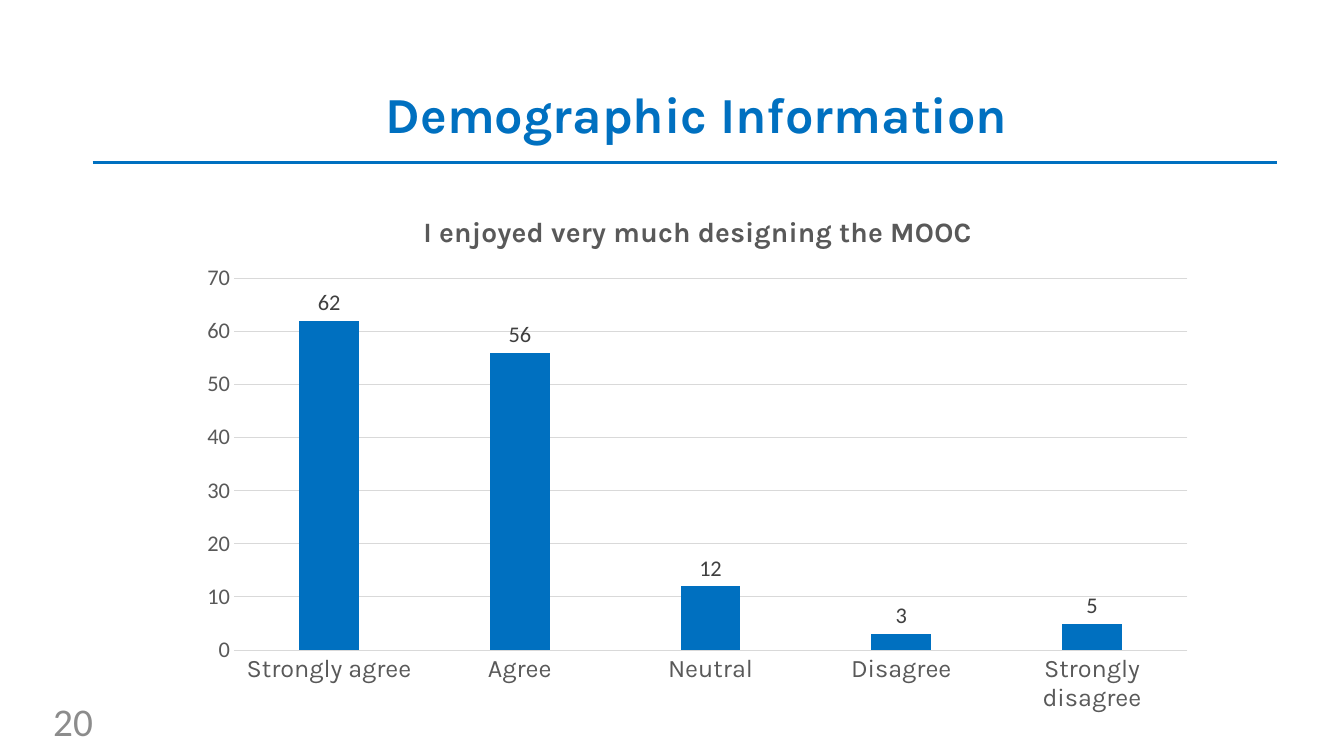
from dataclasses import dataclass

from lxml import etree
from pptx import Presentation
from pptx.chart.data import CategoryChartData
from pptx.dml.color import RGBColor
from pptx.enum.chart import XL_CHART_TYPE as ChartType, XL_LABEL_POSITION as LabelPos, XL_TICK_MARK as Tick
from pptx.enum.shapes import MSO_CONNECTOR as Connector
from pptx.enum.text import MSO_ANCHOR as Anchor, PP_ALIGN as Align
from pptx.oxml import parse_xml
from pptx.oxml.ns import nsdecls, qn
from pptx.util import Inches, Pt


@dataclass(frozen=True)
class TextStyle:
    size: float
    color: str
    face: str
    bold: bool = False


@dataclass(frozen=True)
class Theme:
    blue: str = "0070C0"
    grid: str = "D9D9D9"
    title: TextStyle = TextStyle(36, "0070C0", "Karla", True)
    chart_title: TextStyle = TextStyle(20, "595959", "Karla", True)
    category: TextStyle = TextStyle(18, "595959", "Karla")
    value: TextStyle = TextStyle(16, "595959", "Calibri")
    label: TextStyle = TextStyle(16, "404040", "Calibri")
    number: TextStyle = TextStyle(28, "8C8C8C", "Calibri")


@dataclass(frozen=True)
class Answer:
    text: str
    count: int


THEME = Theme()
ANSWERS = [
    Answer("Strongly agree", 62),
    Answer("Agree", 56),
    Answer("Neutral", 12),
    Answer("Disagree", 3),
    Answer("Strongly disagree", 5),
]


def rgb(color: str) -> RGBColor:
    return RGBColor.from_string(color)


def style_font(font, style: TextStyle) -> None:
    font.size, font.bold, font.name = Pt(style.size), style.bold, style.face
    font.color.rgb = rgb(style.color)


def style_line(line, color: str, width: float) -> None:
    line.color.rgb = rgb(color)
    line.width = Pt(width)


def place(s, left: float, top: float, width: float, height: float) -> None:
    s.left, s.top, s.width, s.height = map(Inches, (left, top, width, height))


def write(s, text: str, style: TextStyle, align: Align) -> None:
    tf = s.text_frame
    tf.text, tf.word_wrap, tf.vertical_anchor = text, True, Anchor.MIDDLE
    p = tf.paragraphs[0]
    p.alignment = align
    style_font(p.runs[0].font, style)


def set_layout(element, successors: tuple[str, ...], **fractions: float) -> None:
    """Fix a chart part's place, in fractions of the chart's size."""
    for old in element.findall(qn("c:layout")):
        element.remove(old)
    modes = '<c:xMode val="edge"/><c:yMode val="edge"/>'
    if "w" in fractions:
        modes = '<c:layoutTarget val="inner"/>' + modes
    sizes = "".join(f'<c:{key} val="{v}"/>' for key, v in fractions.items())
    layout = parse_xml(
        f'<c:layout {nsdecls("c")}><c:manualLayout>{modes}{sizes}</c:manualLayout></c:layout>'
    )
    element.insert_element_before(layout, *successors)


def style_axis(axis, style: TextStyle) -> None:
    axis.major_tick_mark = axis.minor_tick_mark = Tick.NONE
    style_font(axis.tick_labels.font, style)


def add_rule(slide) -> None:
    ends = map(Inches, (0.92, 1.61, 12.67, 1.61))
    rule = slide.shapes.add_connector(Connector.STRAIGHT, *ends)
    style_line(rule.line, THEME.blue, 2)
    etree.SubElement(rule._element.spPr, qn("a:effectLst"))


def add_answer_chart(slide) -> None:
    data = CategoryChartData()
    data.categories = [a.text for a in ANSWERS]
    data.add_series("Series 1", [a.count for a in ANSWERS])
    box = map(Inches, (1.81, 1.85, 10.17, 5.35))
    chart = slide.shapes.add_chart(ChartType.COLUMN_CLUSTERED, *box, data).chart
    chart.has_legend = False
    chart.font.name, chart.font.size = "Calibri", Pt(10)

    chart.has_title = True
    title = chart.chart_title
    title.text_frame.text = "I enjoyed very much designing the MOOC"
    style_font(title.text_frame.paragraphs[0].runs[0].font, THEME.chart_title)
    title.include_in_layout = False
    set_layout(title._element, ("c:overlay", "c:spPr", "c:txPr"), x=0.23, y=0.04)

    style_axis(chart.category_axis, THEME.category)
    style_line(chart.category_axis.format.line, THEME.grid, 0.75)
    counts = chart.value_axis
    style_axis(counts, THEME.value)
    counts.minimum_scale, counts.maximum_scale, counts.major_unit = 0, 70, 10
    counts.format.line.fill.background()
    style_line(counts.major_gridlines.format.line, THEME.grid, 0.75)

    plot = chart.plots[0]
    plot.gap_width, plot.overlap, plot.vary_by_categories = 219, -27, False
    fill = plot.series[0].format.fill
    fill.solid()
    fill.fore_color.rgb = rgb(THEME.blue)
    plot.has_data_labels = True
    labels = plot.data_labels
    labels.show_value, labels.position = True, LabelPos.OUTSIDE_END
    style_font(labels.font, THEME.label)
    area = chart._chartSpace.chart.plotArea
    set_layout(area, ("c:barChart",), x=0.05, y=0.17, w=0.93, h=0.69)


def main() -> None:
    prs = Presentation()
    prs.slide_width, prs.slide_height = Inches(13.33), Inches(7.5)
    slide = prs.slides.add_slide(prs.slide_layouts[5])
    title = slide.shapes.title
    place(title, 0.7, 0.44, 12.42, 1.45)
    write(title, "Demographic Information", THEME.title, Align.CENTER)
    title.text_frame.paragraphs[0].line_spacing = 0.9
    add_rule(slide)
    number = slide.shapes.add_textbox(*map(Inches, (0.02, 6.95, 1, 0.4)))
    write(number, "20", THEME.number, Align.RIGHT)
    add_answer_chart(slide)
    prs.save("out.pptx")


if __name__ == "__main__":
    main()
